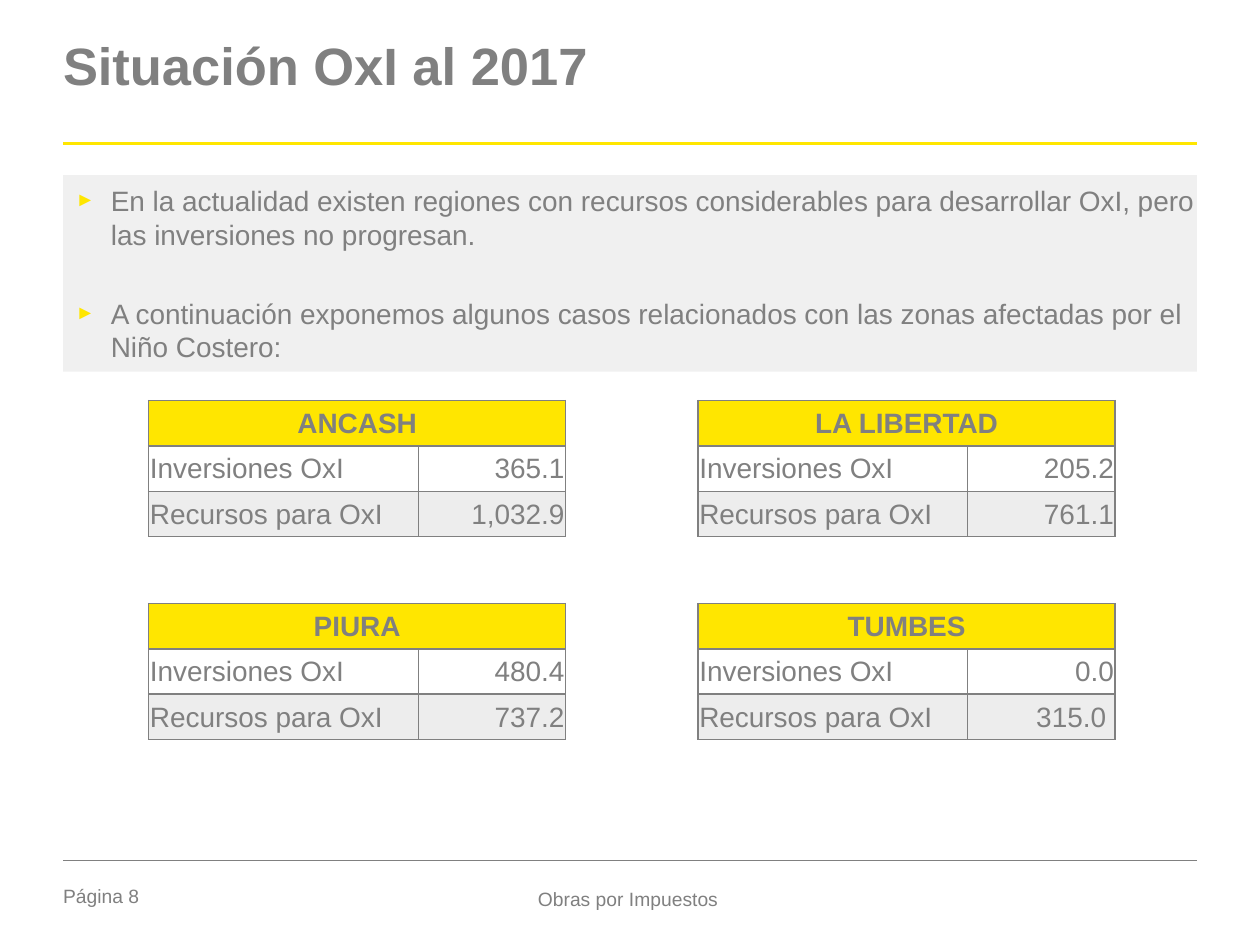
import pptx
import pptx.util
import pptx.dml.color
import pptx.enum.shapes
import pptx.enum.text
import pptx.oxml
import pptx.oxml.ns

Inches = pptx.util.Inches
Pt = pptx.util.Pt
ALIGN = pptx.enum.text.PP_ALIGN
ANCHOR = pptx.enum.text.MSO_ANCHOR

COLORS = {
    "text": "808080",
    "accent": "FFE600",
    "panel": "F0F0F0",
    "band": "EDEDED",
    "page": "FFFFFF",
}
FRAME = {
    "margin_left": 0,
    "margin_right": 0,
    "margin_top": 0,
    "margin_bottom": 0,
    "word_wrap": True,
    "auto_size": pptx.enum.text.MSO_AUTO_SIZE.NONE,
    "vertical_anchor": ANCHOR.TOP,
}
CELL = {
    "margin_left": Inches(0.01),
    "margin_right": Inches(0.01),
    "margin_top": Inches(0.01),
    "margin_bottom": 0,
    "vertical_anchor": ANCHOR.MIDDLE,
}
POINTS = [
    ("En la actualidad existen regiones con recursos considerables para desarrollar OxI, "
     "pero las inversiones no progresan.", 3.2),
    ("A continuación exponemos algunos casos relacionados con las zonas afectadas por el "
     "Niño Costero:", 26),
]
REGIONS = [
    [("ANCASH", "365.1", "1,032.9"), ("LA LIBERTAD", "205.2", "761.1")],
    [("PIURA", "480.4", "737.2"), ("TUMBES", "0.0", "315.0 ")],
]


def rgb(name):
    return pptx.dml.color.RGBColor.from_string(COLORS[name])


def apply(target, values):
    for name, value in values.items():
        setattr(target, name, value)


def place(shape, box):
    lengths = map(Inches, box)
    apply(shape, dict(zip(("left", "top", "width", "height"), lengths)))


def write(para, text, size, bold=False, **layout):
    apply(para, layout)
    span = para.add_run()
    span.text = text
    apply(span.font, {"name": "Arial", "size": Pt(size), "bold": bold})
    span.font.color.rgb = rgb("text")


def add_rule(page, box, color, weight):
    left, top, width = box
    rule = page.shapes.add_connector(
        pptx.enum.shapes.MSO_CONNECTOR.STRAIGHT,
        Inches(left), Inches(top), Inches(left + width), Inches(top))
    rule.line.color.rgb = rgb(color)
    rule.line.width = Pt(weight)
    pptx.oxml.ns.qn("a:effectLst")
    rule._element.spPr.append(pptx.oxml.parse_xml(
        f'<a:effectLst {pptx.oxml.ns.nsdecls("a")}/>'))


def fill_title(title, box):
    place(title, box)
    apply(title.text_frame, FRAME)
    write(title.text_frame.paragraphs[0], "Situación OxI al 2017", 30, True,
          alignment=ALIGN.LEFT, line_spacing=0.85)


def add_bullet(para):
    properties = para._p.get_or_add_pPr()
    properties.set("marL", str(Inches(0.38)))
    properties.set("indent", str(Inches(-0.28)))
    namespace = pptx.oxml.ns.nsdecls("a")
    for xml in (
        f'<a:buClr {namespace}><a:srgbClr val="{COLORS["accent"]}"/></a:buClr>',
        f'<a:buSzPct {namespace} val="70000"/>',
        f'<a:buFont {namespace} typeface="Arial"/>',
        f'<a:buChar {namespace} char="►"/>',
    ):
        properties.append(pptx.oxml.parse_xml(xml))


def fill_body(body, box):
    place(body, box)
    body.fill.solid()
    body.fill.fore_color.rgb = rgb("panel")
    frame = body.text_frame
    apply(frame, FRAME | {"vertical_anchor": ANCHOR.MIDDLE})
    for index, (text, gap) in enumerate(POINTS):
        para = frame.add_paragraph() if index else frame.paragraphs[0]
        write(para, text, 16, alignment=ALIGN.LEFT, space_before=Pt(gap))
        add_bullet(para)


def add_borders(cell):
    properties = cell._tc.get_or_add_tcPr()
    for index, side in enumerate(("lnL", "lnR", "lnT", "lnB")):
        properties.insert(index, pptx.oxml.parse_xml(
            f'<a:{side} {pptx.oxml.ns.nsdecls("a")} w="{Pt(1)}"><a:solidFill>'
            f'<a:srgbClr val="{COLORS["text"]}"/></a:solidFill></a:{side}>'))


def add_region_table(page, box, region):
    name, invested, available = region
    rows = [(name, ""), ("Inversiones OxI", invested), ("Recursos para OxI", available)]
    table = page.shapes.add_table(3, 2, *map(Inches, box)).table
    apply(table, {"first_row": False, "horz_banding": False})
    for column, width in zip(table.columns, (2.14, box[2] - 2.14)):
        column.width = Inches(width)
    for row, texts in enumerate(rows):
        table.rows[row].height = Inches(box[3] / 3)
        for column, text in enumerate(texts):
            cell = table.cell(row, column)
            apply(cell, CELL)
            cell.fill.solid()
            cell.fill.fore_color.rgb = rgb(("accent", "page", "band")[row])
            add_borders(cell)
            if text:
                side = (ALIGN.LEFT, ALIGN.RIGHT)[column] if row else ALIGN.CENTER
                write(cell.text_frame.paragraphs[0], text, 16, row == 0, alignment=side)
    table.cell(0, 0).merge(table.cell(0, 1))


def add_region_grid(page, box):
    left, top, width, height = box
    table_width, table_height = 3.31, 1.08
    for row, regions in enumerate(REGIONS):
        for column, region in enumerate(regions):
            add_region_table(page, (
                left + column * (width - table_width),
                top + row * (height - table_height),
                table_width, table_height), region)


def add_label(page, box, text, alignment, anchor):
    label = page.shapes.add_textbox(*map(Inches, box))
    apply(label.text_frame, FRAME | {"vertical_anchor": anchor})
    write(label.text_frame.paragraphs[0], text, 11, alignment=alignment)


def add_footer(page, box):
    left, top, width = box
    add_rule(page, box, "text", 0.25)
    add_label(page, (left, top + 0.19, 0.79, 0.22), "Página 8", ALIGN.LEFT, ANCHOR.TOP)
    add_label(page, (3.42, top + 0.19, 3.13, 0.22), "Obras por Impuestos",
              ALIGN.CENTER, ANCHOR.MIDDLE)


def main():
    deck = pptx.Presentation()
    apply(deck, {"slide_width": Inches(10), "slide_height": Inches(7.5)})
    page = deck.slides.add_slide(deck.slide_layouts[1])
    fill_title(page.shapes.title, (0.5, 0.34, 9, 0.94))
    add_rule(page, (0.5, 1.14, 9), "accent", 1.5)
    fill_body(page.placeholders[1], (0.5, 1.39, 9, 1.56))
    add_region_grid(page, (1.18, 3.18, 7.67, 2.69))
    add_footer(page, (0.5, 6.83, 9))
    deck.save("out.pptx")


if __name__ == "__main__":
    main()
